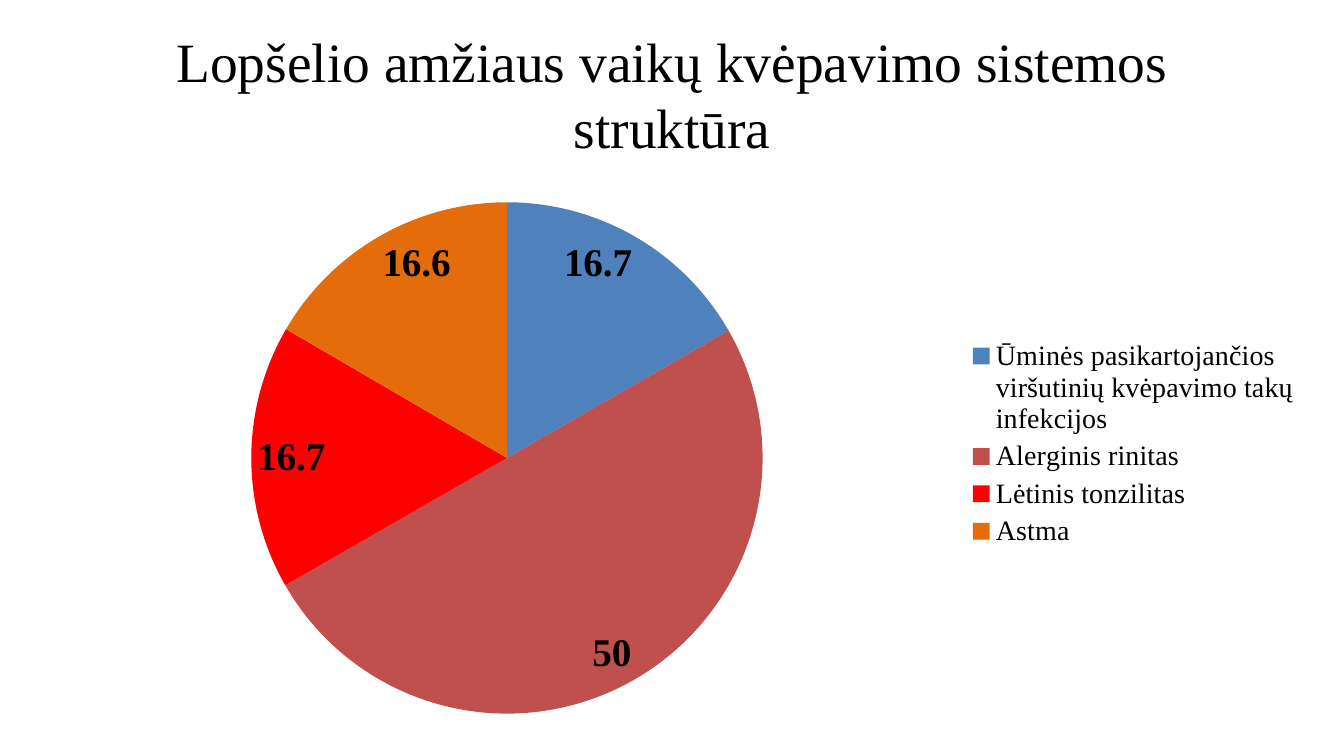
from pptx import Presentation
from pptx import util as u
from pptx.chart.data import CategoryChartData
from pptx.dml.color import RGBColor
from pptx.enum import chart as ch, text
from pptx.oxml import parse_xml
from pptx.oxml.ns import nsdecls, qn

BLACK = RGBColor(0x00, 0x00, 0x00)
BLUE = RGBColor(0x4F, 0x81, 0xBD)
BRICK = RGBColor(0xC0, 0x50, 0x4D)
RED = RGBColor(0xFF, 0x00, 0x00)
ORANGE = RGBColor(0xE4, 0x6C, 0x0A)
SERIF = "Times New Roman"

# Diagnosis, share in percent, slice colour
DIAGNOSES = [
    ("Ūminės pasikartojančios viršutinių kvėpavimo takų infekcijos", 16.7, BLUE),
    ("Alerginis rinitas", 50, BRICK),
    ("Lėtinis tonzilitas", 16.7, RED),
    ("Astma", 16.6, ORANGE),
]


def style_font(font, name, size, bold=False):
    font.name = name
    font.size = u.Pt(size)
    font.bold = bold
    font.color.rgb = BLACK


def add_heading(slide, wording):
    heading = slide.shapes.add_textbox(u.Cm(1.7), u.Cm(0.76), u.Cm(30.48), u.Cm(3.18))
    frame = heading.text_frame
    frame.word_wrap = True
    frame.vertical_anchor = text.MSO_ANCHOR.MIDDLE
    line = frame.paragraphs[0]
    line.text = wording
    line.alignment = text.PP_ALIGN.CENTER
    style_font(line.font, SERIF, 39.6)


def place(part, index, x, y, w, h, target=""):
    """Fix a chart part's position, as fractions of the chart area."""
    for old in part.findall(qn("c:layout")):
        part.remove(old)
    sizes = f'<c:x val="{x}"/><c:y val="{y}"/><c:w val="{w}"/><c:h val="{h}"/>'
    part.insert(index, parse_xml(
        f'<c:layout {nsdecls("c")}><c:manualLayout>{target}'
        f'<c:xMode val="edge"/><c:yMode val="edge"/>{sizes}'
        '</c:manualLayout></c:layout>'))


def add_pie(slide, diagnoses):
    shares = CategoryChartData(number_format="General")
    shares.categories = [name for name, _, _ in diagnoses]
    shares.add_series("Series 1", [share for _, share, _ in diagnoses])
    pie = slide.shapes.add_chart(
        ch.XL_CHART_TYPE.PIE, u.Cm(1.14), u.Cm(3.94), u.Cm(31.88), u.Cm(14.48), shares).chart
    pie.has_title = False
    style_font(pie.font, "Calibri", 18)

    # Slices
    plot = pie.plots[0]
    plot.vary_by_categories = True
    for index, (_, _, colour) in enumerate(diagnoses):
        fill = plot.series[0].points[index].format.fill
        fill.solid()
        fill.fore_color.rgb = colour

    # Values inside the rim
    plot.has_data_labels = True
    labels = plot.data_labels
    labels.show_value = True
    labels.show_percentage = False
    labels.position = ch.XL_LABEL_POSITION.INSIDE_END
    style_font(labels.font, SERIF, 28, bold=True)

    # Legend
    pie.has_legend = True
    pie.legend.position = ch.XL_LEGEND_POSITION.RIGHT
    pie.legend.include_in_layout = False
    style_font(pie.legend.font, SERIF, 20)

    # Positions within the chart area
    area = pie.element.find(qn("c:chart"))
    place(area.find(qn("c:plotArea")), 0, 0.16, 0.08, 0.41, 0.89,
          '<c:layoutTarget val="inner"/>')
    place(area.find(qn("c:legend")), 1, 0.73, 0.31, 0.26, 0.38)


def main():
    deck = Presentation()
    deck.slide_width, deck.slide_height = u.Cm(33.87), u.Cm(19.05)
    slide = deck.slides.add_slide(deck.slide_layouts[6])
    add_heading(slide, "Lopšelio amžiaus vaikų kvėpavimo sistemos struktūra")
    add_pie(slide, DIAGNOSES)
    deck.save("out.pptx")


if __name__ == "__main__":
    main()
